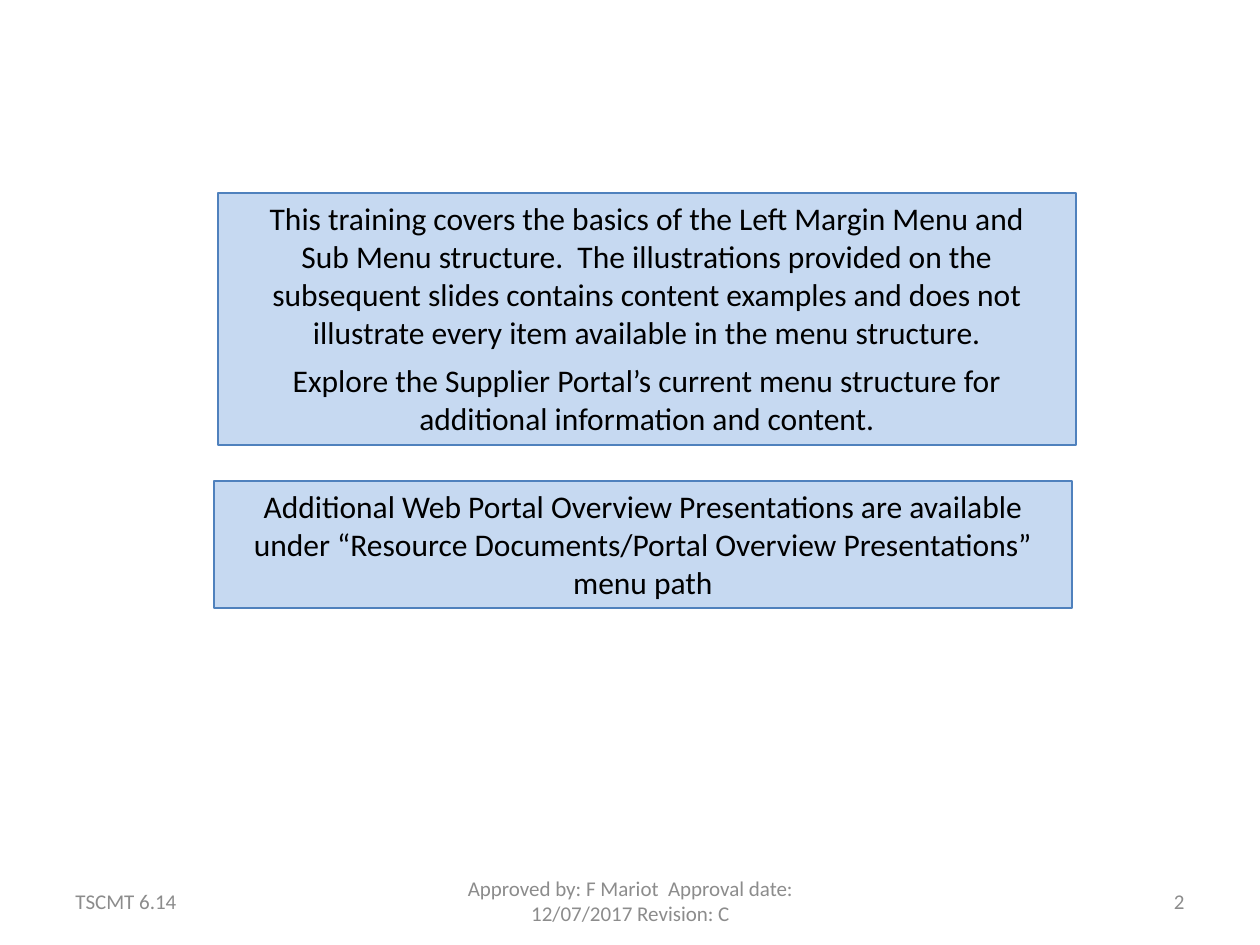
import pptx
import pptx.dml.color
import pptx.enum.shapes
import pptx.enum.text
import pptx.util

ALIGN = pptx.enum.text.PP_ALIGN
ANCHOR = pptx.enum.text.MSO_ANCHOR
FIT = pptx.enum.text.MSO_AUTO_SIZE
COLORS = {"fill": "C6D9F1", "line": "4F81BD", "text": "000000", "foot": "8C8C8C"}
SCALE = 914400 / 126

LEAD = (
    "This training covers the basics of the Left Margin Menu and\v"
    "Sub Menu structure.  The illustrations provided on the subsequent slides "
    "contains content examples and does not illustrate every item available "
    "in the menu structure."
)
EXPLORE = (
    "Explore the Supplier Portal’s current menu structure for additional "
    "information and content."
)
MORE = (
    "Additional Web Portal Overview Presentations are available under "
    "“Resource Documents/Portal Overview Presentations” menu path"
)


def px(num):
    return pptx.util.Emu(round(num * SCALE))


def color(name):
    return pptx.dml.color.RGBColor.from_string(COLORS[name])


def style(item, form):
    for name, value in form.items():
        setattr(item, name, value)


def write(frame, texts, size, tint, form):
    """Fill a text frame with one paragraph per text, all in one format."""
    frame.word_wrap = True
    frame.text = "\n".join(texts)
    for para in frame.paragraphs:
        style(para, form)
        style(para.font, {"name": "Calibri", "size": pptx.util.Pt(size)})
        para.font.color.rgb = color(tint)


def add_note(slide, area, texts):
    note = slide.shapes.add_shape(
        pptx.enum.shapes.MSO_SHAPE.RECTANGLE, *map(px, area)
    )
    note.shadow.inherit = False
    note.fill.solid()
    note.fill.fore_color.rgb = color("fill")
    note.line.color.rgb = color("line")
    note.line.width = pptx.util.Pt(0.75)
    form = {"alignment": ALIGN.CENTER, "space_after": pptx.util.Pt(6)}
    write(note.text_frame, texts, 18, "text", form)
    style(
        note.text_frame,
        {"vertical_anchor": ANCHOR.TOP, "auto_size": FIT.SHAPE_TO_FIT_TEXT},
    )


def add_foot(slide, left, width, text, align):
    box = slide.shapes.add_textbox(*map(px, (left, 876, width, 50)))
    write(box.text_frame, [text], 12, "foot", {"alignment": align})
    box.text_frame.vertical_anchor = ANCHOR.MIDDLE


def main():
    deck = pptx.Presentation()
    style(deck, {"slide_width": px(1260), "slide_height": px(945)})
    slide = deck.slides.add_slide(deck.slide_layouts[6])
    add_note(slide, (218, 193, 858, 252), [LEAD, EXPLORE])
    add_note(slide, (214, 481, 858, 127), [MORE])
    approval = "Approved by: F Mariot  Approval date: 12/07/2017 Revision: C"
    for foot in (
        (63, 294, "TSCMT 6.14", ALIGN.LEFT),
        (431, 399, approval, ALIGN.CENTER),
        (903, 294, "2", ALIGN.RIGHT),
    ):
        add_foot(slide, *foot)
    deck.save("out.pptx")


if __name__ == "__main__":
    main()
